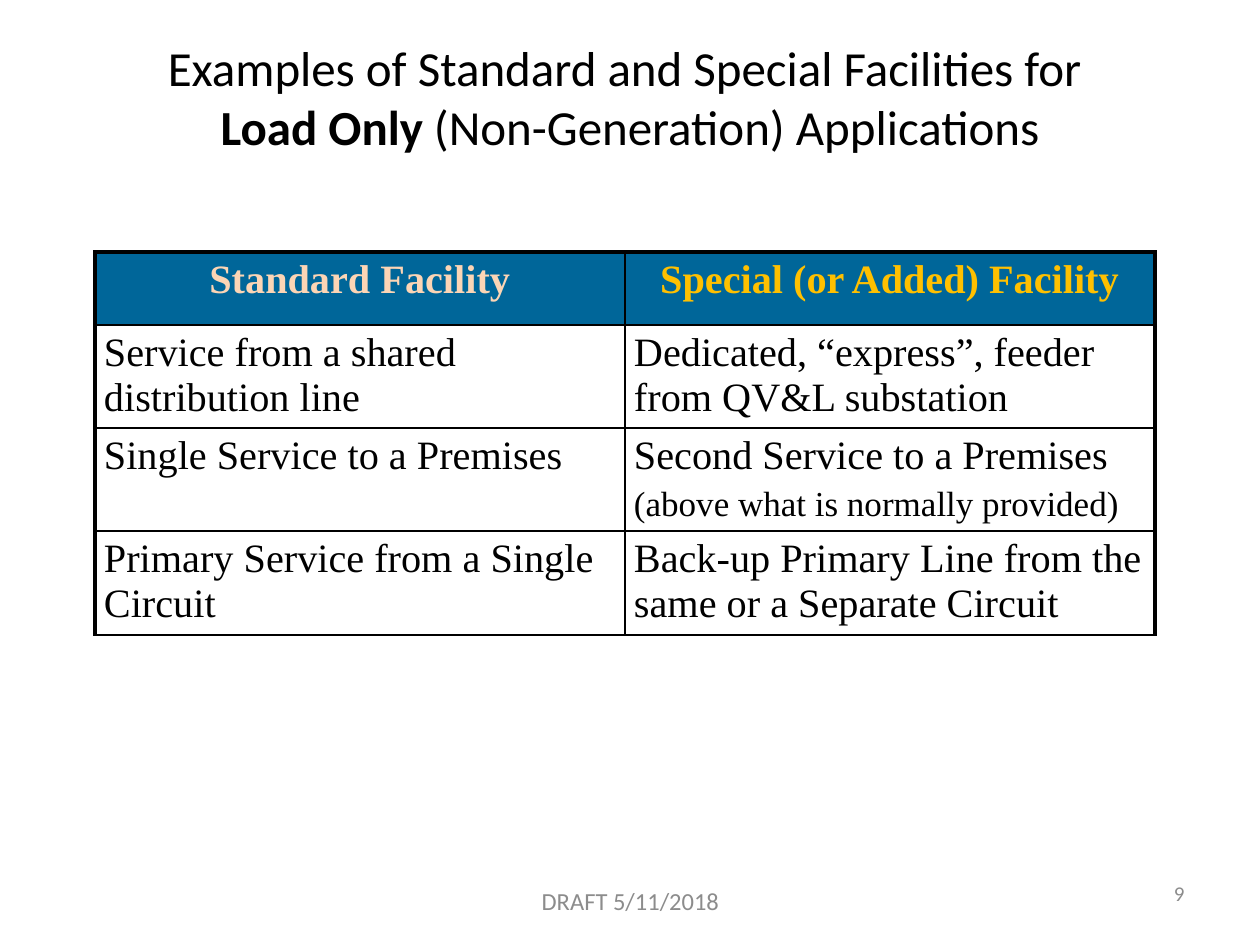
import pptx
import pptx.util
import pptx.dml.color
import pptx.enum.text
import pptx.oxml
import pptx.oxml.ns

TITLE = [
    [("Examples of Standard and Special Facilities for ", False)],
    [("Load Only", True), (" (Non-Generation) Applications", False)],
]
HEAD = ["Standard Facility", "Special (or Added) Facility"]
BODY = [
    [["Service from a shared distribution line"],
     ["Dedicated, “express”, feeder from QV&L substation"]],
    [["Single Service to a Premises"],
     ["Second Service to a Premises", "(above what is normally provided)"]],
    [["Primary Service from a Single Circuit"],
     ["Back-up Primary Line from the same or a Separate Circuit"]],
]
THEME = {
    "sans": "Calibri", "serif": "Times New Roman",
    "ink": "000000", "gray": "8C8C8C", "band": "006699",
    "heads": ["FCD5B5", "FFC000"],
    "title": 28, "cell": 23, "note": 20, "foot": 14, "page": 12,
    "thick": 2.25, "thin": 1,
}
ALIGN = pptx.enum.text.PP_ALIGN
MIDDLE = pptx.enum.text.MSO_ANCHOR.MIDDLE
FOOT = [
    ("9", (903, 861, 294, 65), "page", ALIGN.RIGHT),
    ("DRAFT 5/11/2018", (431, 876, 399, 50), "foot", ALIGN.CENTER),
]
TITLE_BOX = (63, 21, 1134, 151)
GRID_BOX = (95, 252, 1060, 383)
ROWS = [73, 103, 103, 104]
PAD_X, PAD_Y = 9, 6


def px(n):
    return pptx.util.Emu(round(n * 914400 / 126))


def style(para, face, size, color, align, bold=None):
    para.alignment = align
    font = para.font
    font.name = THEME[face]
    font.size = pptx.util.Pt(THEME[size])
    font.color.rgb = pptx.dml.color.RGBColor.from_string(color)
    font.bold = bold


def border(cell, sides):
    props = cell._tc.get_or_add_tcPr()
    for side in "LRTB":
        width = pptx.util.Pt(THEME["thick" if side in sides else "thin"])
        props.append(pptx.oxml.parse_xml(
            f'<a:ln{side} {pptx.oxml.ns.nsdecls("a")} w="{width}">'
            f'<a:solidFill><a:srgbClr val="{THEME["ink"]}"/></a:solidFill>'
            f'</a:ln{side}>'))


def add_title(slide):
    shape = slide.shapes.title
    shape.left, shape.top, shape.width, shape.height = map(px, TITLE_BOX)
    frame = shape.text_frame
    frame.vertical_anchor = MIDDLE
    para = frame.paragraphs[0]
    style(para, "sans", "title", THEME["ink"], ALIGN.CENTER)
    for i, line in enumerate(TITLE):
        if i:
            para.add_line_break()
        for text, bold in line:
            run = para.add_run()
            run.text = text
            run.font.bold = bold


def fill_cell(cell, lines, row, col):
    cell.margin_left = cell.margin_right = px(PAD_X)
    cell.margin_top = cell.margin_bottom = px(PAD_Y)
    border(cell, "LR"[col] + ("" if row else "T"))
    if row:
        cell.fill.background()
    else:
        cell.fill.solid()
        cell.fill.fore_color.rgb = pptx.dml.color.RGBColor.from_string(THEME["band"])
    color = THEME["ink"] if row else THEME["heads"][col]
    align = ALIGN.LEFT if row else ALIGN.CENTER
    cell.text = "\n".join(lines)
    for i, para in enumerate(cell.text_frame.paragraphs):
        size = "note" if i else "cell"
        style(para, "serif", size, color, align, row == 0)
        para.space_before = pptx.util.Pt(THEME[size] * 0.2)


def add_grid(slide):
    data = [[[text] for text in HEAD]] + BODY
    table = slide.shapes.add_table(len(data), len(HEAD), *map(px, GRID_BOX)).table
    table.first_row = table.horz_banding = False
    for col in table.columns:
        col.width = px(GRID_BOX[2] / len(HEAD))
    for r, line in enumerate(data):
        table.rows[r].height = px(ROWS[r])
        for c, lines in enumerate(line):
            fill_cell(table.cell(r, c), lines, r, c)


def add_foot(slide):
    for text, box, size, align in FOOT:
        frame = slide.shapes.add_textbox(*map(px, box)).text_frame
        frame.word_wrap = True
        frame.vertical_anchor = MIDDLE
        frame.text = text
        style(frame.paragraphs[0], "sans", size, THEME["gray"], align)


def main():
    deck = pptx.Presentation()
    deck.slide_width, deck.slide_height = px(1260), px(945)
    slide = deck.slides.add_slide(deck.slide_layouts[5])
    add_title(slide)
    add_grid(slide)
    add_foot(slide)
    deck.save("out.pptx")


if __name__ == "__main__":
    main()
